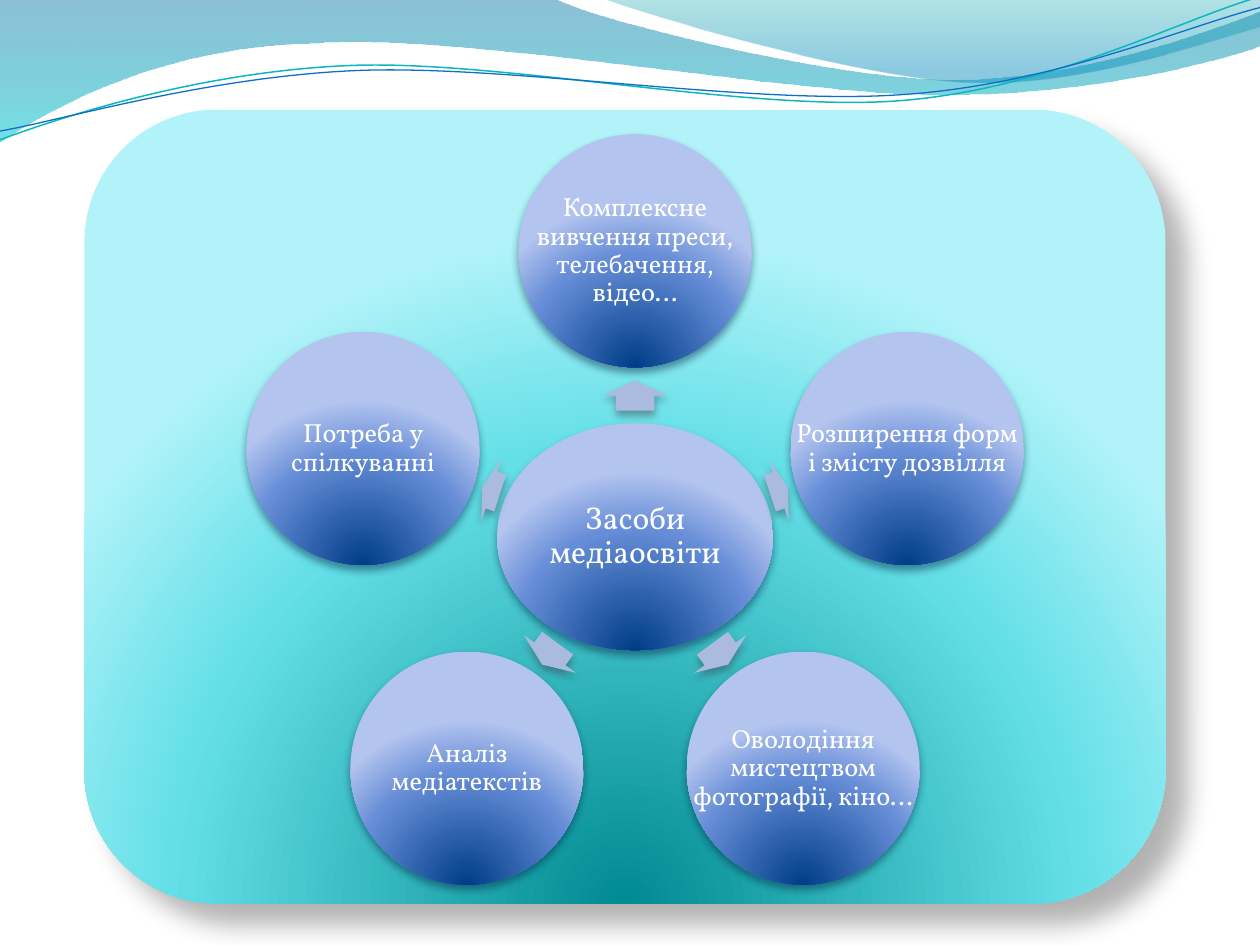
import math
import pptx
import pptx.util
import pptx.dml.color
import pptx.enum.shapes
import pptx.enum.text
import pptx.oxml
import pptx.oxml.ns

PX = 9144
NS = pptx.oxml.ns.nsdecls("a")
SHAPE = pptx.enum.shapes.MSO_SHAPE
RADIAL = '<a:path path="circle"><a:fillToRect l="50000" t="130000" r="50000" b="-30000"/></a:path>'
LINEAR = '<a:lin ang="5400000" scaled="0"/>'


def rgb(value):
    return pptx.dml.color.RGBColor.from_string(value)


def paint(sp, fill, direction=None, shadow=None):
    sp.line.fill.background()
    sp.shadow.inherit = False
    if isinstance(fill, str):
        sp.fill.solid()
        sp.fill.fore_color.rgb = rgb(fill)
    else:
        sp.fill.background()
        stops = "".join(
            f'<a:gs pos="{pos * 1000}"><a:srgbClr val="{rgb(color)}">'
            f'<a:alpha val="{alpha * 1000}"/></a:srgbClr></a:gs>'
            for pos, color, alpha in fill)
        grad = pptx.oxml.parse_xml(
            f'<a:gradFill {NS} rotWithShape="1"><a:gsLst>{stops}</a:gsLst>{direction}</a:gradFill>')
        spPr = sp._element.spPr
        spPr.replace(spPr.find(pptx.oxml.ns.qn("a:noFill")), grad)
    if shadow:
        color, alpha, blur, dist, angle = shadow
        sp._element.spPr.find(pptx.oxml.ns.qn("a:effectLst")).append(pptx.oxml.parse_xml(
            f'<a:outerShdw {NS} blurRad="{int(blur * 12700)}" dist="{dist * 12700}" '
            f'dir="{angle * 60000}" algn="ctr" rotWithShape="0"><a:srgbClr val="{rgb(color)}">'
            f'<a:alpha val="{alpha * 1000}"/></a:srgbClr></a:outerShdw>'))


prs = pptx.Presentation()
prs.slide_width = 1000 * PX
prs.slide_height = 750 * PX
s = prs.slides.add_slide(prs.slide_layouts[6])

waves = [
    ([(0, 0), (440, -1), (476, 17, 664, 63, 758, 63), (853, 63, 958, 26, 1000, 9), (1001, 36),
      (983, 44, 870, 76, 746, 75), (622, 75, 382, 28, 257, 34), (129, 36, 46, 83, -1, 113)],
     [(0, "0074A1", 45), (100, "00C6CF", 55)], None, 0),
    ([(479, -1), (509, 11, 682, 62, 769, 65), (856, 69, 961, 32, 1000, 21), (1000, 0)],
     [(0, "00A1A9", 30), (80, "008BBF", 45)], None, 0),
    ([(0, 111), (48, 93, 158, 57, 277, 52), (395, 47, 593, 89, 713, 80), (833, 71, 938, 15, 998, -2)],
     None, ("0AB8BF", 0.85), 2.7),
    ([(0, 104), (47, 96, 164, 61, 283, 56), (403, 51, 597, 84, 717, 75), (836, 67, 941, 21, 1000, 6)],
     None, ("0F6FC6", 0.75), 2.7),
]
for segments, fill, line, tilt in waves:
    cos, sin = math.cos(math.radians(tilt)), math.sin(math.radians(tilt))
    points = [(x - 499, y - 58) for seg in segments for x, y in zip(seg[::2], seg[1::2])]
    points = [(round((499 + x * cos - y * sin) * PX), round((58 + x * sin + y * cos) * PX))
              for x, y in points]
    builder = s.shapes.build_freeform(*points[0], scale=1.0)
    builder.add_line_segments(points[1:], close=fill is not None)
    sp = builder.convert_to_shape()
    sp.rotation = -tilt % 360
    steps = list(sp._element.spPr.iter(pptx.oxml.ns.qn("a:lnTo")))
    for seg in segments[1:]:
        first, *rest = [steps.pop(0) for _ in range(len(seg) // 2)]
        if rest:
            curve = pptx.oxml.parse_xml(f"<a:cubicBezTo {NS}/>")
            first.addprevious(curve)
            for step in [first, *rest]:
                curve.append(step[0])
                step.getparent().remove(step)
    if fill:
        paint(sp, fill, LINEAR)
    else:
        sp.fill.background()
        sp.shadow.inherit = False
        sp.line.color.rgb = rgb(line[0])
        sp.line.width = pptx.util.Pt(line[1])

sp = s.shapes.add_shape(SHAPE.ROUNDED_RECTANGLE, 67 * PX, 87 * PX, 858 * PX, 630 * PX)
paint(sp, [(0, "008A91", 100), (68, "64DFE7", 100), (100, "B1F3F9", 100)], RADIAL,
      ("000000", 30, 15, 18, 45))

cx, cy, radius = 504, 426, 227
circles = [(cx, cy, 219, 180, 18, 3, "Засоби медіаосвіти")]
arrows = [None]
nodes = [
    ("Комплексне вивчення преси, телебачення, відео…", 24, 112),
    ("Розширення форм і змісту дозвілля", 15, 120),
    ("Оволодіння мистецтвом фотографії, кіно…", 21, 115),
    ("Аналіз медіатекстів", 21, 115),
    ("Потреба у спілкуванні", 15, 120),
]
for i, (text, length, dist) in enumerate(nodes):
    angle = 270 + 72 * i
    dx, dy = math.cos(math.radians(angle)), math.sin(math.radians(angle))
    circles.append((cx + radius * dx, cy + radius * dy, 185, 185, 15, 2, text))
    arrows.append((cx + dist * dx, cy + dist * dy, length, angle % 360))

for (x, y, w, h, size, inset, text), arrow in zip(circles, arrows):
    if arrow:
        ax, ay, length, angle = arrow
        sp = s.shapes.add_shape(SHAPE.RIGHT_ARROW, round((ax - length / 2) * PX),
                                round((ay - 25.5) * PX), length * PX, 51 * PX)
        sp.adjustments[0], sp.adjustments[1] = 0.6, 0.5
        sp.rotation = angle
        paint(sp, "ABBBDF", shadow=("3C414F", 48, 4.5, 3, 90))
    box = [round((x - w / 2) * PX), round((y - h / 2) * PX), w * PX, h * PX]
    sp = s.shapes.add_shape(SHAPE.OVAL, *box)
    paint(sp, [(0, "003D87", 100), (68, "668DD7", 100), (100, "B3C4EF", 100)], RADIAL,
          ("042747", 48, 4.5, 3, 90))
    tf = s.shapes.add_textbox(*box).text_frame
    frame = {"word_wrap": True, "vertical_anchor": pptx.enum.text.MSO_ANCHOR.MIDDLE}
    frame.update({f"margin_{side}": inset * PX for side in ("left", "top", "right", "bottom")})
    for name, value in frame.items():
        setattr(tf, name, value)
    p = tf.paragraphs[0]
    p.alignment = pptx.enum.text.PP_ALIGN.CENTER
    p.line_spacing = 0.9
    r = p.add_run()
    r.text = text
    for name, value in {"name": "Vollkorn", "size": pptx.util.Pt(size)}.items():
        setattr(r.font, name, value)
    r.font.color.rgb = rgb("FFFFFF")

prs.save("out.pptx")
